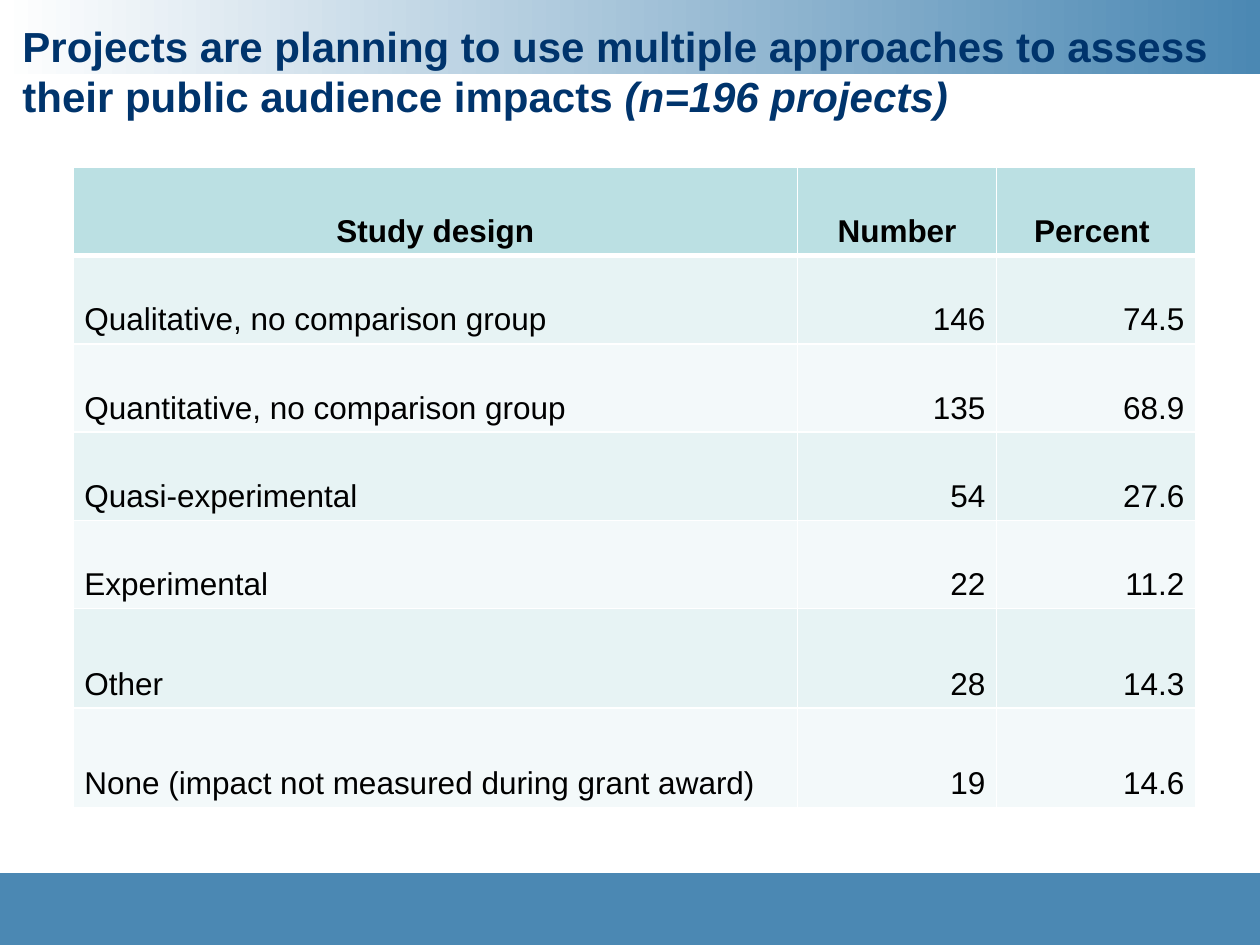
import pptx
import pptx.dml.color
import pptx.enum.shapes
import pptx.enum.text
import pptx.oxml
import pptx.oxml.ns
import pptx.util

Inches = pptx.util.Inches
Pt = pptx.util.Pt
ALIGN = pptx.enum.text.PP_ALIGN
ANCHOR = pptx.enum.text.MSO_ANCHOR

COLORS = {
    "white": "FFFFFF",
    "blue": "4B88B3",
    "navy": "00346C",
    "black": "000000",
    "header": "BBE0E3",
    "odd": "E7F3F4",
    "even": "F3F9FA",
}

STUDY_DESIGNS = [
    ("Study design", "Number", "Percent "),
    ("Qualitative, no comparison group", "146", "74.5"),
    ("Quantitative, no comparison group", "135", "68.9"),
    ("Quasi-experimental", "54", "27.6"),
    ("Experimental", "22", "11.2"),
    ("Other", "28", "14.3"),
    ("None (impact not measured during grant award)", "19", "14.6"),
]


def rgb(name):
    return pptx.dml.color.RGBColor.from_string(COLORS[name])


class SlideBuilder:
    font = "Arial"

    def __init__(self, s):
        self.s = s

    def set_attributes(self, target, values):
        for name, value in values.items():
            setattr(target, name, value)

    def band(self, top, height, *colors):
        sp = self.s.shapes.add_shape(
            pptx.enum.shapes.MSO_SHAPE.RECTANGLE, 0, Inches(top), Inches(10), Inches(height)
        )
        sp.shadow.inherit = False
        sp.line.fill.background()
        if len(colors) == 1:
            sp.fill.solid()
            sp.fill.fore_color.rgb = rgb(colors[0])
            return
        sp.fill.gradient()
        sp.fill.gradient_angle = 0
        for stop, color, position in zip(sp.fill.gradient_stops, colors, (0, 1)):
            stop.color.rgb = rgb(color)
            stop.position = position

    def run(self, p, text, color, **style):
        r = p.add_run()
        r.text = text
        self.set_attributes(r.font, {"name": self.font, **style})
        r.font.color.rgb = rgb(color)

    def title(self, box, text, note):
        sp = self.s.shapes.add_textbox(*map(Inches, box))
        tf = sp.text_frame
        self.set_attributes(
            tf, {"word_wrap": True, "vertical_anchor": ANCHOR.MIDDLE, "margin_top": 0}
        )
        p = tf.paragraphs[0]
        self.run(p, text, "navy", size=Pt(24), bold=True)
        self.run(p, note, "navy", size=Pt(24), bold=True, italic=True)

    def borders(self, cell, top, bottom):
        props = cell._tc.get_or_add_tcPr()
        for side, width in (("L", 1), ("R", 1), ("T", top), ("B", bottom)):
            props.append(pptx.oxml.parse_xml(
                f'<a:ln{side} {pptx.oxml.ns.nsdecls("a")} w="{Pt(width)}"><a:solidFill>'
                f'<a:srgbClr val="{COLORS["white"]}"/></a:solidFill></a:ln{side}>'
            ))

    def cell(self, cell, text, row, column):
        header = row == 0
        self.borders(cell, 3 if row == 1 else 1, 3 if header else 1)
        cell.fill.solid()
        cell.fill.fore_color.rgb = rgb("header" if header else ("even", "odd")[row % 2])
        self.set_attributes(cell, {
            "vertical_anchor": ANCHOR.BOTTOM,
            "margin_left": Inches(0.09),
            "margin_right": Inches(0.09),
            "margin_top": Inches(0.05),
            "margin_bottom": Inches(0.05),
        })
        p = cell.text_frame.paragraphs[0]
        p.alignment = ALIGN.CENTER if header else (ALIGN.RIGHT if column else ALIGN.LEFT)
        p.line_spacing = Pt(12)
        self.run(p, text, "black", size=Pt(18), bold=header)

    def table(self, left, top, widths, heights, rows):
        box = (left, top, sum(widths), sum(heights))
        table = self.s.shapes.add_table(len(rows), len(widths), *map(Inches, box)).table
        for column, width in zip(table.columns, widths):
            column.width = Inches(width)
        for row, height in zip(table.rows, heights):
            row.height = Inches(height)
        for i, row in enumerate(rows):
            for j, text in enumerate(row):
                self.cell(table.cell(i, j), text, i, j)


def main():
    prs = pptx.Presentation()
    prs.slide_width, prs.slide_height = Inches(10), Inches(7.5)
    slide = SlideBuilder(prs.slides.add_slide(prs.slide_layouts[6]))
    slide.band(0, 0.59, "white", "blue")
    slide.band(6.93, 0.57, "blue")
    slide.title(
        (0.08, 0.08, 9.75, 1.01),
        "Projects are planning to use multiple approaches to assess their public audience impacts ",
        "(n=196 projects)",
    )
    slide.table(0.58, 1.33, [5.75, 1.58, 1.58], [0.7] * 5 + [0.79] * 2, STUDY_DESIGNS)
    prs.save("out.pptx")


if __name__ == "__main__":
    main()
